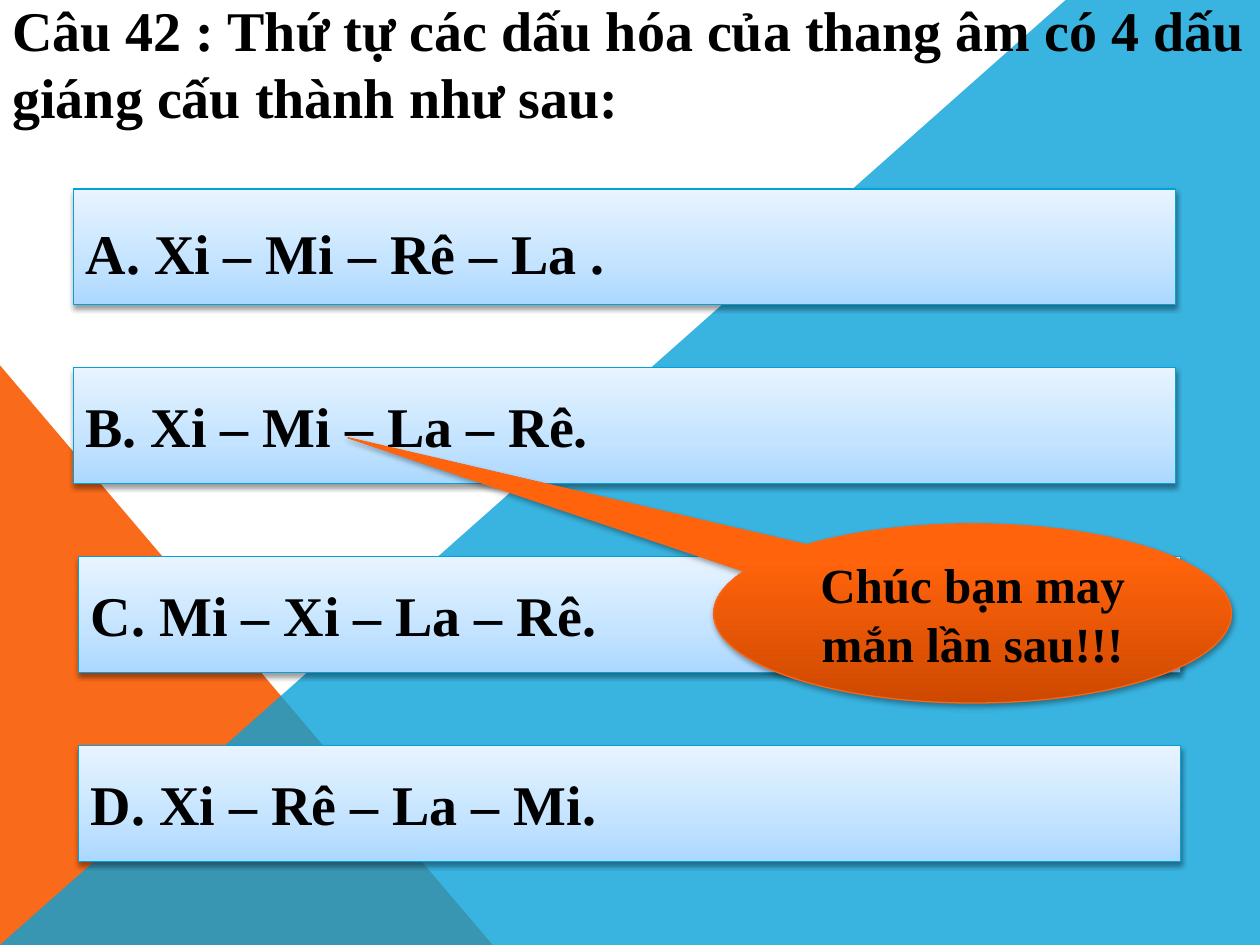
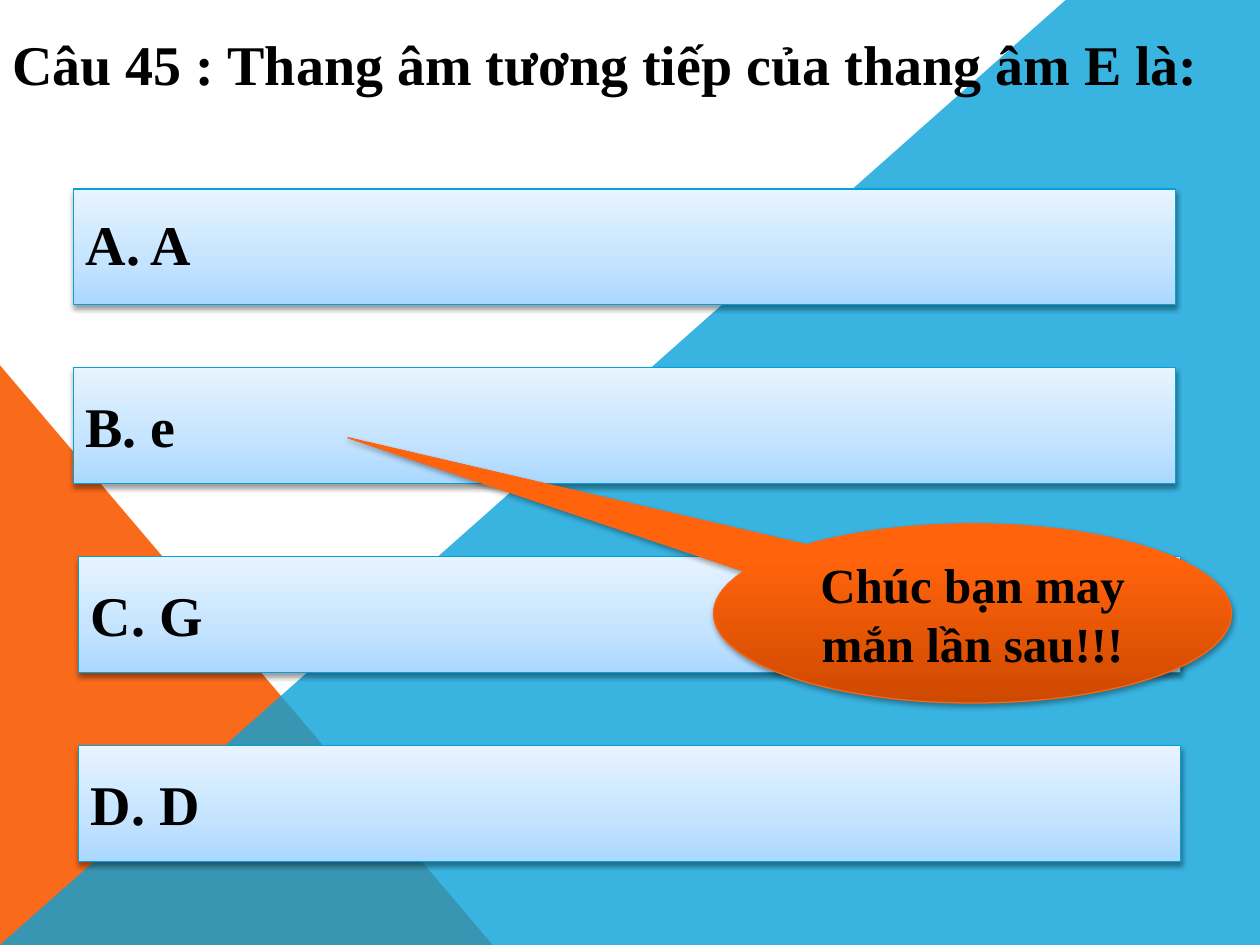
"""Builds two quiz slides: a question, four answer bars and a callout."""
from copy import deepcopy

from lxml.etree import SubElement
from pptx import Presentation
from pptx.dml.color import RGBColor
from pptx.enum.shapes import MSO_SHAPE
from pptx.enum.text import MSO_ANCHOR, PP_ALIGN
from pptx.oxml.ns import qn
from pptx.util import Pt

QUIZ = [
    {"question": "Câu 42 : Thứ tự các dấu hóa của thang âm có 4 dấu giáng cấu thành như sau:",
     "answers": ["A. Xi – Mi – Rê – La .", "B. Xi – Mi – La – Rê.",
                 "C. Mi – Xi – La – Rê.", "D. Xi – Rê – La – Mi."],
     "first_answer": {"margin_top": 10}},
    {"question": "Câu 45 : Thang âm tương tiếp của thang âm E là:",
     "answers": ["A. A", "B. e", "C. G", "D. D"],
     "first_answer": {"line_spacing": 0.9}},
]
REPLY = "Chúc bạn may mắn lần sau!!!"

WIDTH, HEIGHT = 720, 540
FONT, INK = "Times New Roman", "000000"
ORANGE, BLUE = "F96A1B", "08A1D9"
BAR_WIDTH, BAR_HEIGHT = 630, 66.2
BAR_CORNERS = [(41.8, 108), (41.8, 210), (44.8, 318), (44.8, 426)]
BAR_STYLE = {"stops": [(0, "ABD8FF"), (0.35, "C3E3FF"), (1, "E8F4FF")],
             "line": "03A0D9", "shadow": (1.6, 38)}
CALLOUT_BOX = (407.8, 299.4, 296, 102.4)
CALLOUT_TAIL = (-1.206, -0.981)
CALLOUT_STYLE = {"stops": [(0, "CE4900"), (0.8, "FF630C"), (1, "FF640E")],
                 "line": "F96615", "shadow": (1.8, 35)}
BLUE_CORNERS = [(0, HEIGHT), (609, 0), (WIDTH, 0), (WIDTH, HEIGHT)]


def rgb(value):
    return RGBColor.from_string(value)


def plain(sp, color):
    sp.shadow.inherit = False
    sp.fill.solid()
    sp.fill.fore_color.rgb = rgb(color)
    sp.line.fill.background()


def glossy(sp, stops, line, shadow):
    sp.fill.gradient()
    sp.fill.gradient_angle = 90
    gs_list = next(sp._element.iter(qn("a:gsLst")))
    gs_list.append(deepcopy(gs_list[-1]))
    for stop, (position, color) in zip(sp.fill.gradient_stops, stops):
        stop.position = position
        stop.color.rgb = rgb(color)
    sp.line.color.rgb = rgb(line)
    sp.line.width = Pt(0.75)
    sp.shadow.inherit = False
    distance, opacity = shadow
    effects = sp._element.spPr.find(qn("a:effectLst"))
    outer = SubElement(effects, qn("a:outerShdw"), blurRad=str(Pt(3.1)),
                       dist=str(Pt(distance)), dir="5400000", rotWithShape="0")
    black = SubElement(outer, qn("a:srgbClr"), val=INK)
    SubElement(black, qn("a:alpha"), val=str(opacity * 1000))


def write(sp, text, size=32, align=PP_ALIGN.LEFT, margin_top=3.6, line_spacing=1.0):
    tf = sp.text_frame
    frame = {"word_wrap": True, "vertical_anchor": MSO_ANCHOR.MIDDLE,
             "margin_top": Pt(margin_top)}
    for name, value in frame.items():
        setattr(tf, name, value)
    p = tf.paragraphs[0]
    p.alignment, p.line_spacing = align, line_spacing
    r = p.add_run()
    r.text = text
    for name, value in {"name": FONT, "size": Pt(size), "bold": True}.items():
        setattr(r.font, name, value)
    r.font.color.rgb = rgb(INK)


def add_shape(s, kind, *box):
    return s.shapes.add_shape(kind, *map(Pt, box))


def add_backdrop(s):
    plain(add_shape(s, MSO_SHAPE.RIGHT_TRIANGLE, 0, 208.8, 281.5, 331.2), ORANGE)
    start, *rest = [(Pt(x), Pt(y)) for x, y in BLUE_CORNERS]
    builder = s.shapes.build_freeform(*start)
    builder.add_line_segments(rest, close=True)
    sp = builder.convert_to_shape()
    plain(sp, BLUE)
    color = next(sp._element.spPr.iter(qn("a:srgbClr")))
    SubElement(color, qn("a:alpha"), val="80000")


def add_quiz_slide(prs, question, answers, first_answer):
    s = prs.slides.add_slide(prs.slide_layouts[6])
    add_backdrop(s)
    write(s.shapes.add_textbox(0, 0, Pt(WIDTH), Pt(72)), question)
    formats = [first_answer, {}, {}, {}]
    for answer, corner, extra in zip(answers, BAR_CORNERS, formats):
        bar = add_shape(s, MSO_SHAPE.RECTANGLE, *corner, BAR_WIDTH, BAR_HEIGHT)
        glossy(bar, **BAR_STYLE)
        write(bar, answer, **extra)
    callout = add_shape(s, MSO_SHAPE.OVAL_CALLOUT, *CALLOUT_BOX)
    for i, offset in enumerate(CALLOUT_TAIL):
        callout.adjustments[i] = offset
    glossy(callout, **CALLOUT_STYLE)
    write(callout, REPLY, size=28, align=PP_ALIGN.CENTER)


def main():
    prs = Presentation()
    prs.slide_width, prs.slide_height = Pt(WIDTH), Pt(HEIGHT)
    for quiz in QUIZ:
        add_quiz_slide(prs, **quiz)
    prs.save("out.pptx")


if __name__ == "__main__":
    main()
